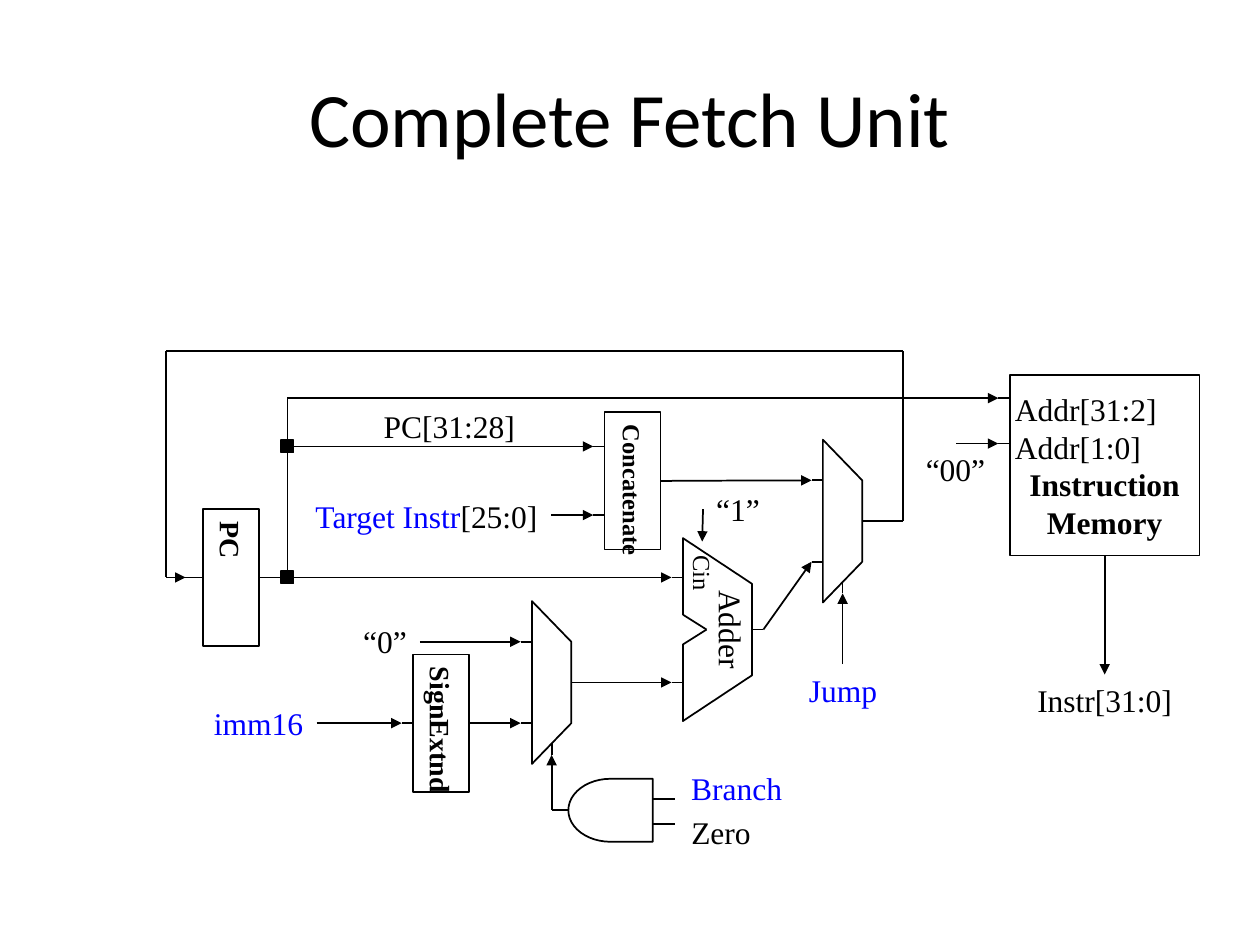
from dataclasses import dataclass

from lxml import etree
from pptx import Presentation
from pptx.dml.color import RGBColor
from pptx.enum import shapes as s, text as t
from pptx.oxml import ns
from pptx.util import Pt


@dataclass(frozen=True)
class Theme:
    """Colours, fonts and sizes of the slide."""
    ink: RGBColor = RGBColor(0, 0, 0)
    paper: RGBColor = RGBColor(255, 255, 255)
    blue: RGBColor = RGBColor(0, 0, 255)
    head: str = "Calibri"
    body: str = "Times New Roman"
    big: int = 44
    mid: int = 18
    unit: int = 16
    small: int = 14
    line: int = 1
    gap: float = 2.25
    stub: float = 6.5


LOOK = Theme()


def style(para, size, color=LOOK.ink, bold=False, face=LOOK.body, align=t.PP_ALIGN.CENTER):
    """Set the font and alignment of a paragraph."""
    para.alignment = align
    font = para.font
    font.size, font.bold, font.name = Pt(size), bold, face
    font.color.rgb = color


def paint(shape, fill=LOOK.paper):
    """Give a shape its fill and thin outline without a shadow."""
    shape.shadow.inherit = False
    shape.fill.solid()
    shape.fill.fore_color.rgb = fill
    shape.line.color.rgb = LOOK.ink
    shape.line.width = Pt(LOOK.line)
    return shape


def solid(slide, box, kind=s.MSO_SHAPE.RECTANGLE, fill=LOOK.paper):
    """Add a preset shape in a box."""
    return paint(slide.shapes.add_shape(kind, *map(Pt, box)), fill)


def outline(slide, box):
    """Add a trapezoid that narrows to the right."""
    x, y, w, h = box
    path = slide.shapes.build_freeform(Pt(x), Pt(y))
    rest = (x + w, y + h / 4), (x + w, y + h * 3 / 4), (x, y + h)
    path.add_line_segments([(Pt(a), Pt(b)) for a, b in rest], close=True)
    return paint(path.convert_to_shape())


def spot(end):
    """Return the point of an end given as (x, y) or (shape, side)."""
    shape, side = end
    if isinstance(shape, (int, float)):
        return end
    across, down = ((0.5, 0), (0, 0.5), (0.5, 1), (1, 0.5))[side]
    return (shape.left + shape.width * across) / 12700, (shape.top + shape.height * down) / 12700


def wire(slide, *ends, tip=False, color=LOOK.ink, width=LOOK.line):
    """Draw straight segments through the ends and return the last end."""
    for a, b in zip(ends, ends[1:]):
        link = slide.shapes.add_connector(s.MSO_CONNECTOR.STRAIGHT, *map(Pt, spot(a) + spot(b)))
        for end, join in ((a, link.begin_connect), (b, link.end_connect)):
            if spot(end) is not end:
                join(*end)
        link.line.color.rgb = color
        link.line.width = Pt(width)
        if tip and b is ends[-1]:
            etree.SubElement(link.line._get_or_add_ln(), ns.qn("a:tailEnd"), type="triangle")
        etree.SubElement(link._element.spPr, ns.qn("a:effectLst"))
    return ends[-1]


def port(slide, end, dx, dy=0):
    """Draw a short stub away from an end and return its outer point."""
    x, y = spot(end)
    return wire(slide, end, (x + dx * LOOK.stub, y + dy * LOOK.stub))


def label(slide, box, *parts, size=LOOK.mid, face=LOOK.body, turn=0):
    """Add one line of centred text made of (words, colour) parts."""
    area = slide.shapes.add_textbox(*map(Pt, box))
    area.rotation = turn
    frame = area.text_frame
    frame.word_wrap = False
    frame.margin_left = frame.margin_right = 0
    frame.vertical_anchor = t.MSO_ANCHOR.MIDDLE
    para = frame.paragraphs[0]
    style(para, size, parts[0][1], face=face)
    for words, color in parts:
        run = para.add_run()
        run.text = words
        if color != parts[0][1]:
            run.font.color.rgb = color


def block(slide, box, name, size=LOOK.unit, ins=(0.5,)):
    """Add a unit with upright text and return its input and output ports."""
    x, y, _, h = box
    unit = solid(slide, box)
    frame = unit.text_frame
    frame.text, frame.word_wrap = name, False
    frame.vertical_anchor = t.MSO_ANCHOR.MIDDLE
    frame._txBody.bodyPr.set("vert", "eaVert")
    style(frame.paragraphs[0], size, bold=True)
    starts = [(unit, 1) if part == 0.5 else (x, y + h * part) for part in ins]
    return [port(slide, p, -1) for p in starts], port(slide, (unit, 3), 1)


def mux(slide, box):
    """Add a multiplexer and return its inputs, output and select ports."""
    x, y, w, h = box
    outline(slide, box)
    ins = [port(slide, (x, y + h * part), -1) for part in (0.25, 0.75)]
    return ins, port(slide, (x + w, y + h / 2), 1), port(slide, (x + w / 2, y + h * 7 / 8), 0, 1)


def adder(slide, box):
    """Add the notched adder and return its inputs and output."""
    x, y, w, h = box
    half, notch = y + h / 2, 8.5
    unit = outline(slide, box)
    frame = unit.text_frame
    frame.text, frame.word_wrap = "Adder", True
    frame.vertical_anchor = t.MSO_ANCHOR.TOP
    frame.margin_left = frame.margin_top = frame.margin_bottom = 0
    frame.margin_right = Pt(1)
    frame._txBody.bodyPr.set("vert", "vert")
    style(frame.paragraphs[0], LOOK.mid)
    upper, lower = (x, half - notch), (x, half + notch)
    wire(slide, upper, lower, color=LOOK.paper, width=LOOK.gap)
    for end in (upper, lower):
        wire(slide, (x + 13.5, half), end)
    label(slide, (x - 5.75, y + 8, 34.5, 24), ("Cin", LOOK.ink), size=LOOK.small, turn=90)
    wire(slide, (x + 11.5, y - 16.5), (x + 11, y + 2), tip=True)
    return [port(slide, (x, y + v), -1) for v in (22.5, 82.5)], port(slide, (x + w, half), 1)


def memory(slide, box):
    """Add the instruction memory and return its address and data ports."""
    x, y, _, _ = box
    unit = solid(slide, box)
    frame = unit.text_frame
    frame.text = "Addr[31:2]\nAddr[1:0]\nInstruction\nMemory"
    frame.word_wrap = True
    frame.margin_left = frame.margin_right = Pt(3)
    frame.vertical_anchor = t.MSO_ANCHOR.MIDDLE
    for i, para in enumerate(frame.paragraphs):
        style(para, LOOK.mid, bold=i > 1, align=t.PP_ALIGN.CENTER if i > 1 else t.PP_ALIGN.LEFT)
    return [port(slide, (x, y + v), -1) for v in (13, 39)], port(slide, (unit, 2), 0, 1)


def gate(slide, box):
    """Add the AND gate with two inputs and return its output point."""
    x, y, w, h = box
    solid(slide, box, s.MSO_SHAPE.FLOWCHART_DELAY).rotation = 180
    for v in (11.5, 26):
        wire(slide, (x + w, y + v), (x + w + 13, y + v))
    return x, y + h / 2


def fetch(slide):
    """Place the parts of the fetch unit and wire them together."""
    (pcin,), pcout = block(slide, (116, 290.75, 32, 78.5), "PC")
    (immin,), ext = block(slide, (236, 374, 32, 78.5), "SignExtnd")
    cat, target = block(slide, (345.5, 235.5, 32, 78.5), "Concatenate", LOOK.small, (0.25, 0.75))
    jump, nextpc, jumpsel = mux(slide, (470.25, 251.25, 22.5, 93))
    pick, step, picksel = mux(slide, (304, 343.5, 22.5, 93))
    add, total = adder(slide, (390.25, 307.5, 39.5, 104.5))
    addr, data = memory(slide, (577, 214.5, 108.5, 103))
    both = gate(slide, (324.75, 445, 48.25, 36))
    bus, dot = 164.25, 7
    top, low = [solid(slide, (bus - dot / 2, y - dot / 2, dot, dot), fill=LOOK.ink)
                for y in (cat[0][1], pcout[1])]

    wire(slide, pcout, (low, 1))
    wire(slide, (low, 0), (top, 2))
    wire(slide, (top, 0), (bus, addr[0][1]), addr[0], tip=True)
    left, right, roof, gap = 95, 516, 200.5, 3.5
    entry = pcin[0] - gap, pcin[1]
    wire(slide, nextpc, (right, nextpc[1]), (right, roof), (left, roof), (left, entry[1]), entry, tip=True)
    wire(slide, entry, pcin)
    for a, b in (((top, 3), cat[0]), ((low, 3), add[0]), ((315, cat[1][1]), cat[1]),
                 (target, jump[0]), (total, jump[1]), (step, add[1]), (ext, pick[1]),
                 ((240, pick[0][1]), pick[0]), ((181, immin[1]), immin),
                 ((546.5, addr[1][1]), addr[1]), ((jumpsel[0], 379.5), jumpsel),
                 (data, (data[0], 385.5))):
        wire(slide, a, b, tip=True)
    wire(slide, both, (picksel[0], both[1]), picksel, tip=True)


def names(slide):
    """Label the signals of the fetch unit."""
    ink, blue, tall = LOOK.ink, LOOK.blue, 29
    for x, y, w, *parts in (
            (585.5, 385.5, 91.5, ("Instr[31:0]", ink)), (455, 379.5, 53.5, ("Jump", blue)),
            (522, 253.5, 48, ("“00”", ink)), (212, 229, 89.5, ("PC[31:28]", ink)),
            (172, 280, 143.5, ("Target Instr", blue), ("[25:0]", ink)),
            (115, 398.5, 65.5, ("imm16", blue)), (401.75, 276.5, 40, ("“1”", ink)),
            (388, 461, 48, ("Zero", ink)), (388, 435.5, 66, ("Branch", blue)),
            (200, 351.5, 40, ("“0”", ink))):
        label(slide, (x, y, w, tall), *parts)


def main():
    """Build and save the slide."""
    deck = Presentation()
    deck.slide_width, deck.slide_height = Pt(720), Pt(540)
    slide = deck.slides.add_slide(deck.slide_layouts[6])
    label(slide, (36, 21.5, 648, 90), ("Complete Fetch Unit", LOOK.ink), size=LOOK.big, face=LOOK.head)
    fetch(slide)
    names(slide)
    deck.save("out.pptx")


if __name__ == "__main__":
    main()
